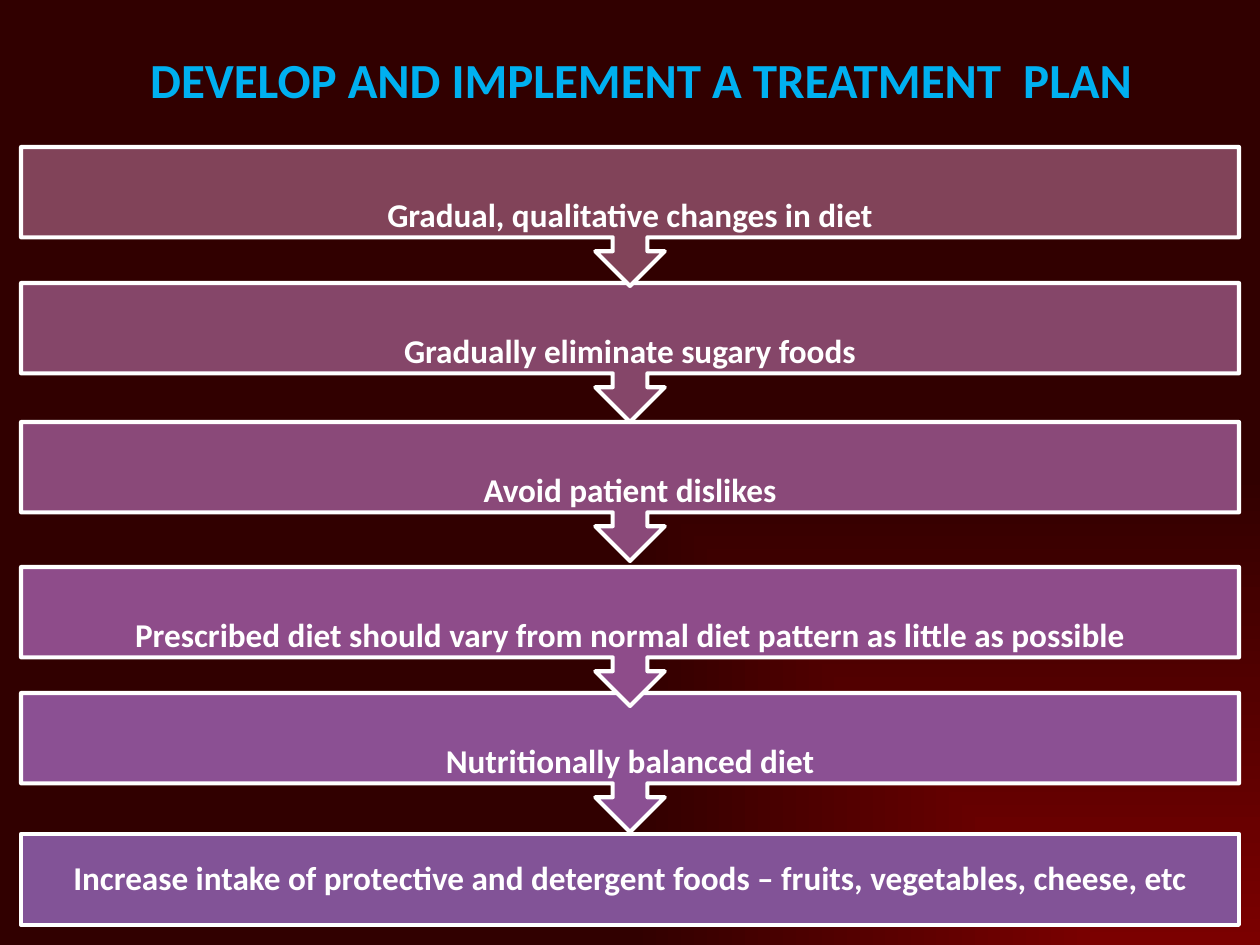
from lxml import etree
from pptx import Presentation
from pptx.dml.color import RGBColor
from pptx.enum import shapes, text
from pptx.oxml.ns import qn
from pptx.util import Pt

PX = 914400 / 126
FONT = "Calibri"
WHITE = RGBColor(0xFF, 0xFF, 0xFF)
TITLE_BLUE = RGBColor(0x00, 0xB0, 0xF0)
GLOW_RED = RGBColor(0x7B, 0x00, 0x00)
DARK_RED = RGBColor(0x31, 0x00, 0x00)

TITLE = "DEVELOP AND IMPLEMENT A TREATMENT  PLAN"
STEPS = [
    ("Gradual, qualitative changes in diet", 147, RGBColor(0x81, 0x43, 0x59)),
    ("Gradually eliminate sugary foods", 283, RGBColor(0x85, 0x46, 0x69)),
    ("Avoid patient dislikes", 422, RGBColor(0x8A, 0x49, 0x79)),
    ("Prescribed diet should vary from normal diet pattern as little as possible",
     567, RGBColor(0x8E, 0x4C, 0x8A)),
    ("Nutritionally balanced diet", 693, RGBColor(0x8B, 0x50, 0x93)),
    ("Increase intake of protective and detergent foods – fruits, vegetables, cheese, etc",
     834, RGBColor(0x82, 0x53, 0x97)),
]
STEP_LEFT, STEP_WIDTH = 21, 1218
CALLOUT_HEIGHT, LAST_HEIGHT = 139, 91


def px(value):
    return round(value * PX)


def paint_background(slide):
    fill = slide.background.fill
    fill.gradient()
    for stop, color in zip(fill.gradient_stops, (GLOW_RED, DARK_RED)):
        stop.color.rgb = color
    linear = next(slide.element.iter(qn("a:lin")))
    gradient_path = etree.Element(qn("a:path"), path="rect")
    etree.SubElement(gradient_path, qn("a:fillToRect"), l="100000", t="100000")
    linear.getparent().replace(linear, gradient_path)


def add_label(slide, words, box, size, color, margins, line_spacing=1.0):
    frame = slide.shapes.add_textbox(*map(px, box)).text_frame
    frame.word_wrap = True
    frame.vertical_anchor = text.MSO_ANCHOR.MIDDLE
    left, top, right, bottom = map(px, margins)
    frame.margin_left, frame.margin_top = left, top
    frame.margin_right, frame.margin_bottom = right, bottom
    paragraph = frame.paragraphs[0]
    paragraph.text = words
    paragraph.alignment = text.PP_ALIGN.CENTER
    paragraph.line_spacing = line_spacing
    paragraph.font.name = FONT
    paragraph.font.size = Pt(size)
    paragraph.font.bold = True
    paragraph.font.color.rgb = color


def add_step(slide, words, top, color, is_last):
    kind = shapes.MSO_SHAPE.RECTANGLE if is_last else shapes.MSO_SHAPE.UP_ARROW_CALLOUT
    box = (STEP_LEFT, top, STEP_WIDTH, LAST_HEIGHT if is_last else CALLOUT_HEIGHT)
    shape = slide.shapes.add_shape(kind, *map(px, box))
    shape.rotation = 0 if is_last else 180
    shape.shadow.inherit = False
    shape.fill.solid()
    shape.fill.fore_color.rgb = color
    shape.line.color.rgb = WHITE
    shape.line.width = Pt(2.36)
    add_label(slide, words, box, 19, WHITE, (19, 19, 19, 19), 0.9)


def main():
    presentation = Presentation()
    presentation.slide_width, presentation.slide_height = px(1260), px(945)
    slide = presentation.slides.add_slide(presentation.slide_layouts[6])
    paint_background(slide)
    add_label(slide, TITLE, (0, 32, 1260, 94), 28, TITLE_BLUE, (35, 6, 13, 6))
    for step in reversed(STEPS):
        add_step(slide, *step, is_last=step is STEPS[-1])
    presentation.save("out.pptx")


if __name__ == "__main__":
    main()
